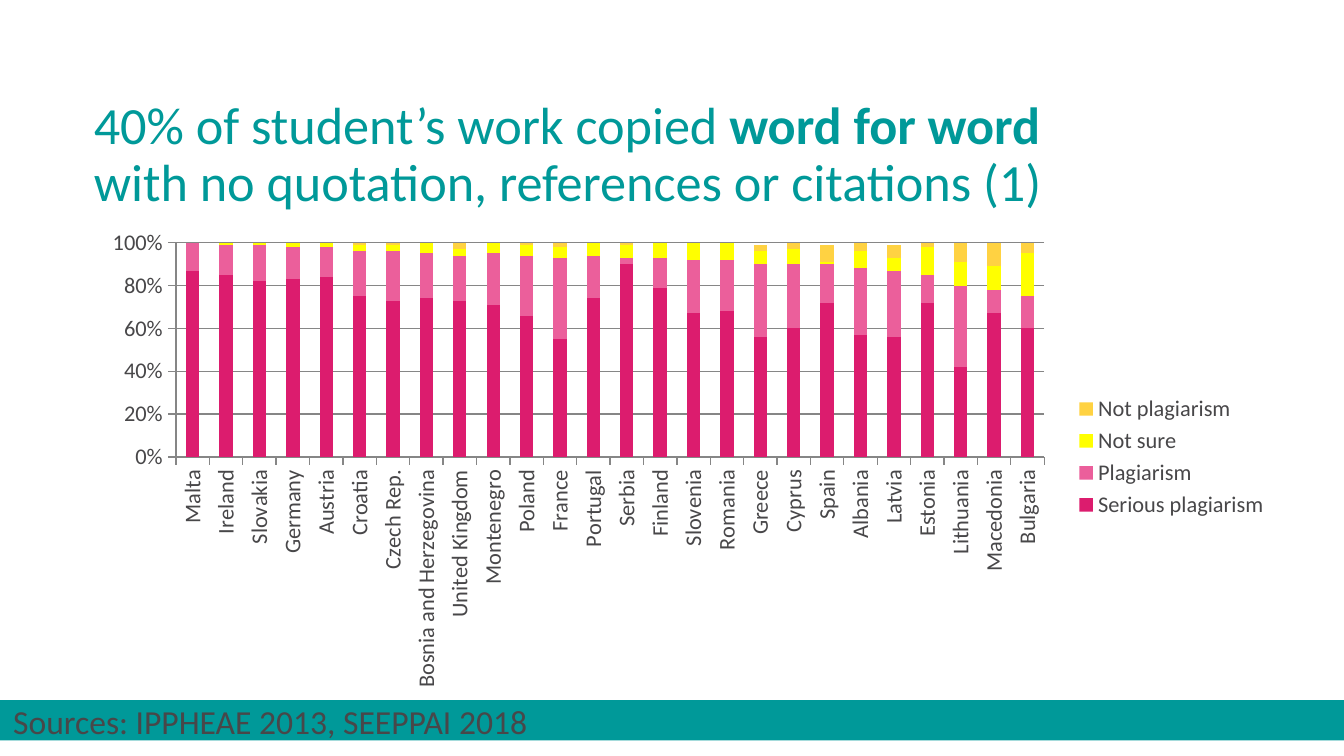
from dataclasses import dataclass

from lxml import etree
from pptx import Presentation
from pptx.chart.data import CategoryChartData
from pptx.dml.color import RGBColor
from pptx.enum.chart import XL_CHART_TYPE, XL_LEGEND_POSITION, XL_TICK_MARK
from pptx.enum.shapes import MSO_SHAPE
from pptx.enum.text import MSO_ANCHOR
from pptx.oxml.ns import qn
from pptx.util import Inches, Pt


@dataclass(frozen=True)
class Theme:
    font: str = "Calibri"
    teal: str = "009999"
    text: str = "484749"
    line: str = "868686"
    title_size: int = 28
    source_size: int = 18
    chart_size: int = 12
    line_width: float = 0.75


THEME = Theme()

COUNTRIES = [
    "Malta", "Ireland", "Slovakia", "Germany", "Austria", "Croatia", "Czech Rep.",
    "Bosnia and Herzegovina", "United Kingdom", "Montenegro", "Poland", "France",
    "Portugal", "Serbia", "Finland", "Slovenia", "Romania", "Greece", "Cyprus",
    "Spain", "Albania", "Latvia", "Estonia", "Lithuania", "Macedonia", "Bulgaria",
]

# (answer, colour, share per country)
ANSWERS = [
    ("Serious plagiarism", "DC1C6E",
     [0.87, 0.85, 0.82, 0.83, 0.84, 0.75, 0.73, 0.74, 0.73, 0.71, 0.66, 0.55, 0.74,
      0.9, 0.79, 0.67, 0.68, 0.56, 0.6, 0.72, 0.57, 0.56, 0.72, 0.42, 0.67, 0.6]),
    ("Plagiarism", "EB5F9B",
     [0.13, 0.14, 0.17, 0.15, 0.14, 0.21, 0.23, 0.21, 0.21, 0.24, 0.28, 0.38, 0.2,
      0.03, 0.14, 0.25, 0.24, 0.34, 0.3, 0.18, 0.31, 0.31, 0.13, 0.38, 0.11, 0.15]),
    ("Not sure", "FFFF00",
     [0, 0.01, 0.01, 0.02, 0.02, 0.03, 0.03, 0.05, 0.03, 0.06, 0.05, 0.05, 0.06,
      0.06, 0.07, 0.08, 0.08, 0.06, 0.07, 0.01, 0.08, 0.06, 0.13, 0.11, 0.11, 0.2]),
    ("Not plagiarism", "FFD242",
     [0, 0, 0.01, 0, 0.01, 0.01, 0.01, 0, 0.03, 0, 0.01, 0.02, 0.01,
      0.01, 0.01, 0, 0.01, 0.03, 0.03, 0.08, 0.04, 0.06, 0.02, 0.09, 0.11, 0.05]),
]


def rgb(color):
    return RGBColor.from_string(color)


def set_font(font, size, color):
    font.name = THEME.font
    font.size = Pt(size)
    font.color.rgb = rgb(color)


def add_text(slide, box, runs, *, size, color, wrap=True, anchor=MSO_ANCHOR.TOP, spacing=1.0):
    """Place one paragraph made of (text, bold) runs."""
    tf = slide.shapes.add_textbox(*map(Inches, box)).text_frame
    tf.word_wrap = wrap
    tf.vertical_anchor = anchor
    p = tf.paragraphs[0]
    p.line_spacing = spacing
    for text, bold in runs:
        r = p.add_run()
        r.text = text
        set_font(r.font, size, color)
        r.font.bold = bold


def add_footer_band(slide, box):
    sp = slide.shapes.add_shape(MSO_SHAPE.RECTANGLE, *map(Inches, box))
    sp.shadow.inherit = False
    sp.fill.solid()
    sp.fill.fore_color.rgb = rgb(THEME.teal)
    sp.line.fill.background()


def set_plot_area(chart, **fractions):
    """Fix the inner plot area as fractions (x, y, w, h) of the chart."""
    plot_area = chart.plots[0]._element.getparent()
    for old in plot_area.findall(qn("c:layout")):
        plot_area.remove(old)
    layout = etree.Element(qn("c:layout"))
    manual = etree.SubElement(layout, qn("c:manualLayout"))
    settings = {"layoutTarget": "inner", "xMode": "edge", "yMode": "edge", **fractions}
    for name, value in settings.items():
        etree.SubElement(manual, qn(f"c:{name}")).set("val", str(value))
    plot_area.insert(0, layout)


def turn_labels_upright(axis):
    """Make the axis labels read from bottom to top."""
    set_font(axis.tick_labels.font, THEME.chart_size, THEME.text)
    body = axis._element.find(qn("c:txPr")).find(qn("a:bodyPr"))
    body.set("rot", "-5400000")
    body.set("vert", "horz")


def style_line(line):
    line.color.rgb = rgb(THEME.line)
    line.width = Pt(THEME.line_width)


def add_answers_chart(slide, box):
    data = CategoryChartData(number_format="0%")
    data.categories = COUNTRIES
    for name, _, shares in ANSWERS:
        data.add_series(name, shares)
    chart = slide.shapes.add_chart(
        XL_CHART_TYPE.COLUMN_STACKED, *map(Inches, box), data).chart
    chart.has_title = False
    set_font(chart.font, THEME.chart_size, THEME.text)

    plot = chart.plots[0]
    plot.gap_width = 150
    plot.overlap = 100
    plot.vary_by_categories = False
    for series, (_, color, _) in zip(plot.series, ANSWERS):
        series.format.fill.solid()
        series.format.fill.fore_color.rgb = rgb(color)

    values = chart.value_axis
    values.minimum_scale, values.maximum_scale, values.major_unit = 0, 1, 0.2
    values.tick_labels.number_format = "0%"
    values.tick_labels.number_format_is_linked = False
    values.has_major_gridlines = True
    style_line(values.major_gridlines.format.line)
    for axis in (values, chart.category_axis):
        axis.major_tick_mark = XL_TICK_MARK.OUTSIDE
        axis.minor_tick_mark = XL_TICK_MARK.NONE
        style_line(axis.format.line)
    turn_labels_upright(chart.category_axis)

    chart.has_legend = True
    chart.legend.position = XL_LEGEND_POSITION.RIGHT
    chart.legend.include_in_layout = False
    set_plot_area(chart, x=0.07, y=0.05, w=0.73, h=0.45)


def add_title(slide, box):
    runs = [("40% of student’s work copied ", False), ("word for word ", True),
            ("with no quotation, references or citations (1)", False)]
    add_text(slide, box, runs, size=THEME.title_size, color=THEME.teal,
             anchor=MSO_ANCHOR.MIDDLE, spacing=0.9)


def add_sources(slide, box):
    add_text(slide, box, [("Sources: IPPHEAE 2013, SEEPPAI 2018", False)],
             size=THEME.source_size, color=THEME.text, wrap=False)


def main():
    prs = Presentation()
    prs.slide_width = Inches(10)
    prs.slide_height = Inches(10 * 9 / 16)
    s = prs.slides.add_slide(prs.slide_layouts[6])
    add_footer_band(s, (0, 5.21, 10, 0.3))
    add_answers_chart(s, (0.69, 1.63, 8.85, 3.54))
    add_title(s, (0.6, 0.69, 7.83, 0.94))
    add_sources(s, (0, 5.17, 4.07, 0.4))
    prs.save("out.pptx")


if __name__ == "__main__":
    main()
